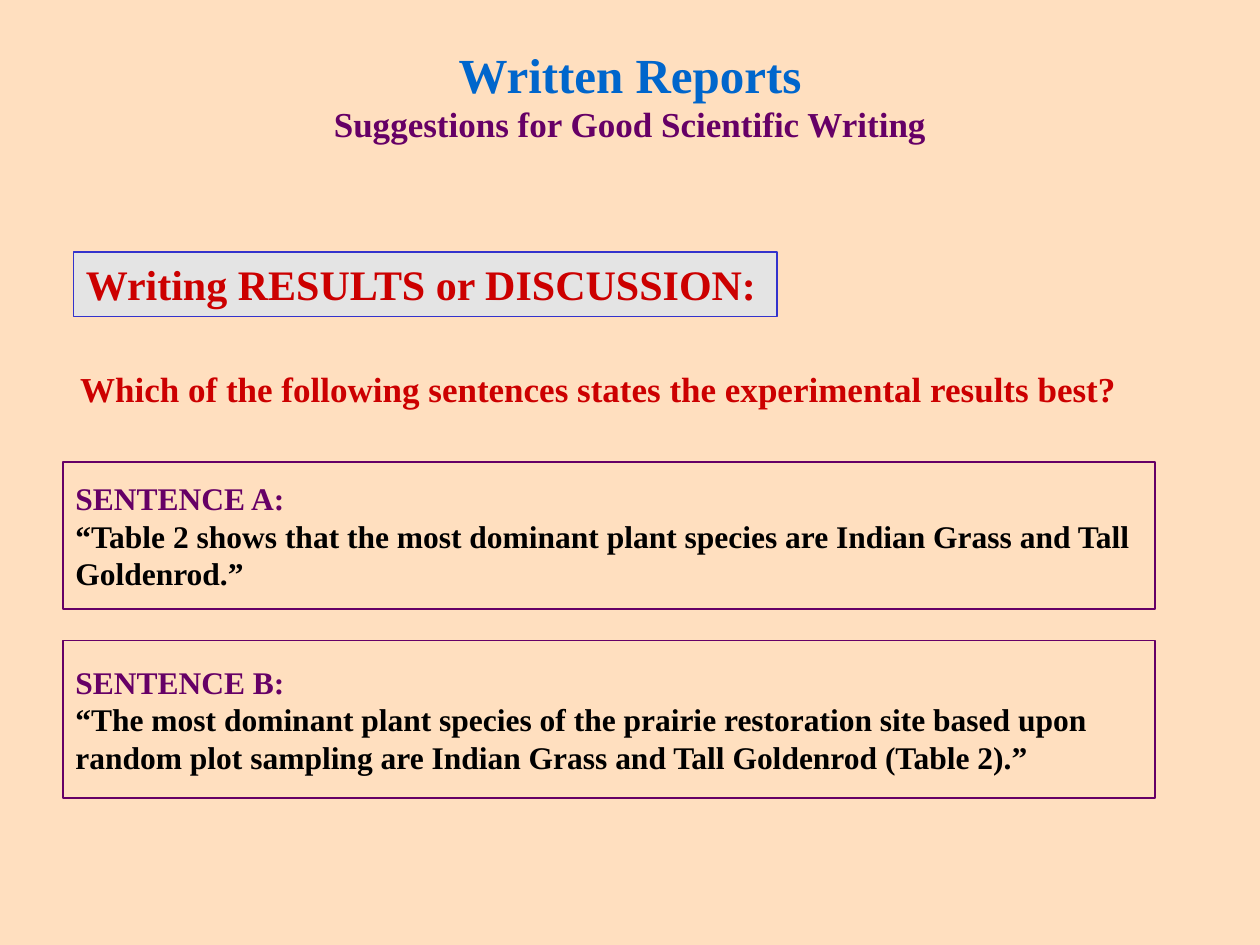
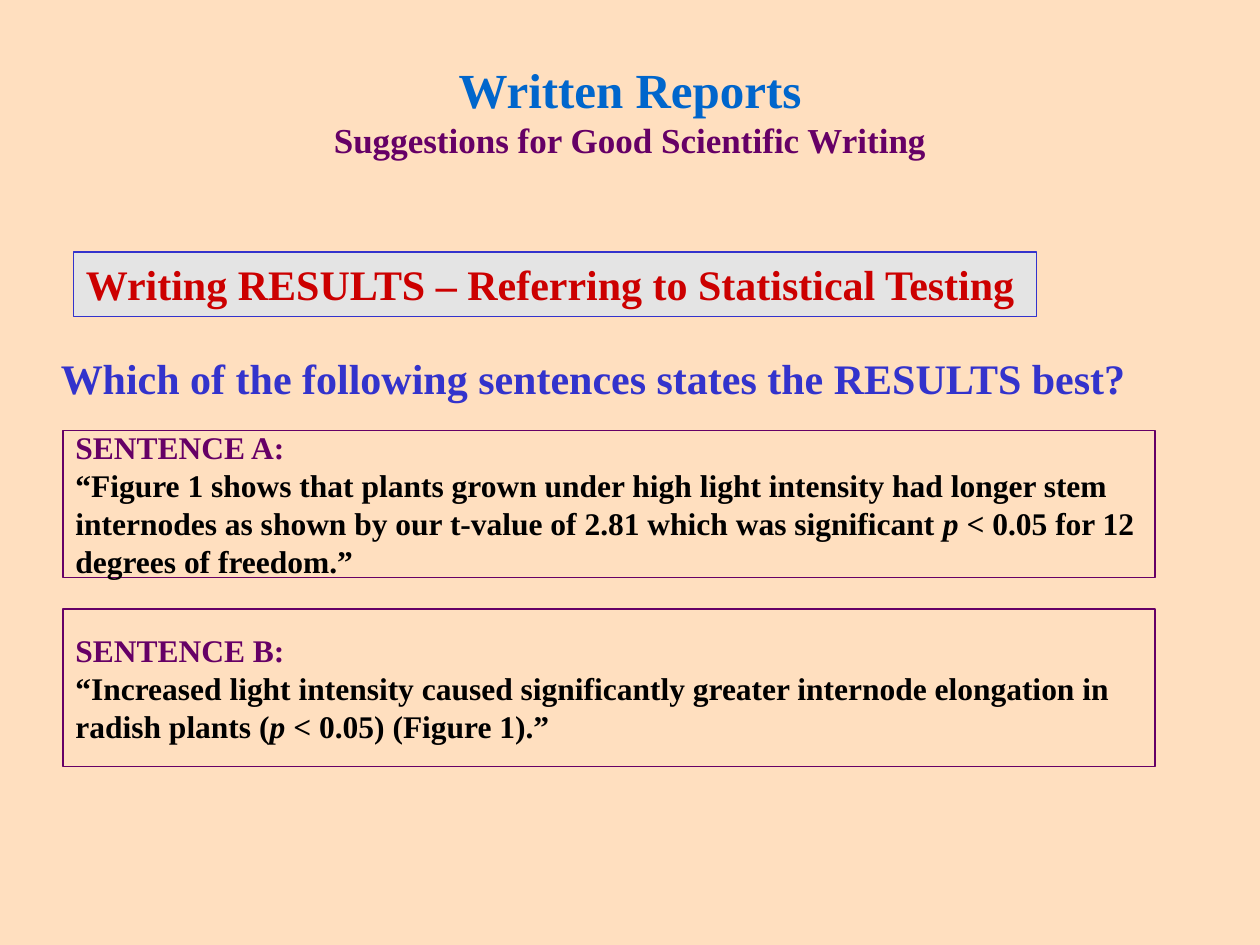
"""Builds two slides on good scientific writing in reports."""
from pptx import Presentation
from pptx import util as u
from pptx.dml.color import RGBColor
from pptx.enum import shapes, text

PX = u.Inches(1) // 96
FONT = "Times New Roman"
PEACH = RGBColor(0xFF, 0xDF, 0xBF)
BLUE = RGBColor(0x00, 0x66, 0xCC)
PURPLE = RGBColor(0x66, 0x00, 0x66)
RED = RGBColor(0xCC, 0x00, 0x00)
INDIGO = RGBColor(0x33, 0x33, 0xCC)
GREY = RGBColor(0xE4, 0xE4, 0xE4)
BLACK = RGBColor(0x00, 0x00, 0x00)
CENTER = text.PP_ALIGN.CENTER
LEFT = text.PP_ALIGN.LEFT


class Report:
    def __init__(self):
        self.deck = Presentation()
        self.deck.slide_width, self.deck.slide_height = 960 * PX, 720 * PX
        self.page = None

    def add_page(self):
        self.page = self.deck.slides.add_slide(self.deck.slide_layouts[6])
        fill = self.page.background.fill
        fill.solid()
        fill.fore_color.rgb = PEACH

    def set_lines(self, box, lines, align, **frame_format):
        frame = box.text_frame
        frame_format = {"word_wrap": True, "vertical_anchor": text.MSO_ANCHOR.MIDDLE} | frame_format
        for name, value in frame_format.items():
            setattr(frame, name, value)
        para = frame.paragraphs[0]
        para.alignment = align
        for number, (size, color, spans) in enumerate(lines):
            if number:
                para.add_line_break()
            for index, words in enumerate(spans):
                span = para.add_run()
                span.text = words
                span.font.color.rgb = color
                style = {"name": FONT, "size": u.Pt(size), "bold": True, "italic": index % 2 == 1}
                for name, value in style.items():
                    setattr(span.font, name, value)

    def label(self, place, *lines):
        box = self.page.shapes.add_textbox(*(side * PX for side in place))
        self.set_lines(box, lines, CENTER)

    def panel(self, place, line_color, lines, fill_color=None, **frame_format):
        box = self.page.shapes.add_shape(shapes.MSO_SHAPE.RECTANGLE, *(side * PX for side in place))
        box.shadow.inherit = False
        box.line.color.rgb = line_color
        box.line.width = u.Pt(0.75)
        if fill_color is None:
            box.fill.background()
        else:
            box.fill.solid()
            box.fill.fore_color.rgb = fill_color
        self.set_lines(box, lines, LEFT, **frame_format)

    def title(self, height):
        self.label((72, 40, 816, height), (28, BLUE, ["Written Reports"]),
                   (20, PURPLE, ["Suggestions for Good Scientific Writing"]))

    def heading(self, width, words):
        self.panel((56, 192, width, 49), INDIGO, [(24, RED, [words])], GREY, word_wrap=False,
                   vertical_anchor=text.MSO_ANCHOR.TOP,
                   auto_size=text.MSO_AUTO_SIZE.SHAPE_TO_FIT_TEXT)

    def sentences(self, top, *quotes):
        """Stack the lettered sentences; every second span of a quote is italic."""
        for letter, height, spans in zip("AB", (112, 120), quotes):
            self.panel((48, top, 832, height), PURPLE,
                       [(18, PURPLE, [f"SENTENCE {letter}:"]), (18, BLACK, spans)])
            top += height + 24


def main():
    report = Report()

    report.add_page()
    report.title(64)
    report.sentences(
        352,
        ["“Table 2 shows that the most dominant plant species are Indian Grass and Tall Goldenrod.”"],
        ["“The most dominant plant species of the prairie restoration site based upon random plot "
         "sampling are Indian Grass and Tall Goldenrod (Table 2).”"])
    report.label((48, 272, 816, 48),
                 (20, RED, ["Which of the following sentences states the experimental results best?"]))
    report.heading(536, "Writing RESULTS or DISCUSSION:")

    report.add_page()
    report.title(88)
    report.sentences(
        328,
        ["“Figure 1 shows that plants grown under high light intensity had longer stem internodes "
         "as shown by our t-value of 2.81 which was significant ", "p",
         " < 0.05 for 12 degrees of freedom.”"],
        ["“Increased light intensity caused significantly greater internode elongation in radish "
         "plants (", "p", " < 0.05) (Figure 1).”"])
    report.label((24, 264, 856, 48),
                 (24, INDIGO, ["Which of the following sentences states the RESULTS best?"]))
    report.heading(734, "Writing RESULTS – Referring to Statistical Testing")

    report.deck.save("out.pptx")


if __name__ == "__main__":
    main()
